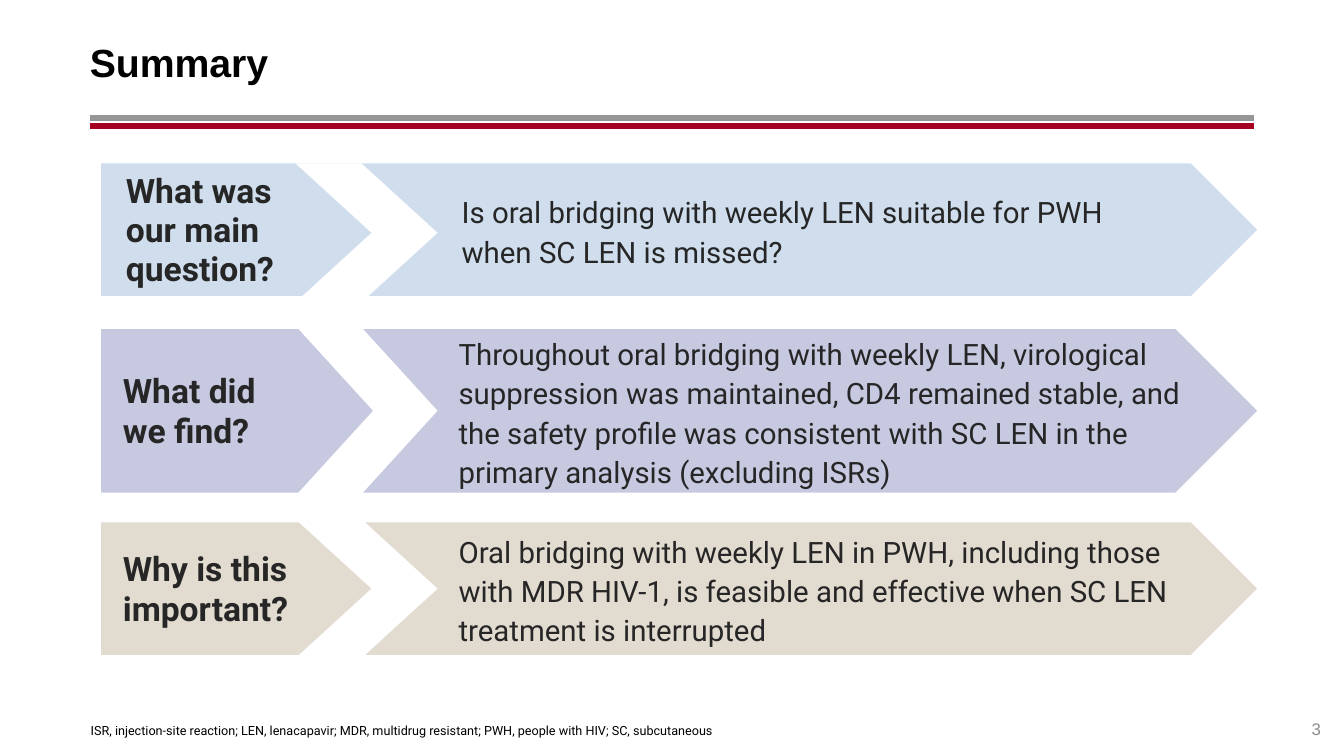
from dataclasses import dataclass

from lxml import etree
from pptx import Presentation
from pptx import util as u
from pptx.dml.color import RGBColor
from pptx.enum import shapes, text
from pptx.oxml import ns


@dataclass(frozen=True)
class Theme:
    ink: str = "262626"
    black: str = "000000"
    white: str = "FFFFFF"
    muted: str = "8C8C8C"
    rules: tuple = ("969696", "A50021")
    bands: tuple = ("CFDDED", "C7C9E1", "E2DBD0")
    head_font: str = "Arial"
    body_font: str = "Roboto"
    title_size: float = 28
    question_size: float = 24
    answer_size: float = 21
    number_size: float = 12
    note_size: float = 9
    leading: float = 28
    rule_width: float = 4.25
    outline: float = 6


THEME = Theme()
TOP, MIDDLE, BOTTOM = (text.MSO_ANCHOR.TOP, text.MSO_ANCHOR.MIDDLE,
                       text.MSO_ANCHOR.BOTTOM)

# question, answer, lines of each, band top, band height, nudge of first row's parts
ROWS = [
    ("What was our main question?", 2.04, 3,
     "Is oral bridging with weekly LEN suitable for PWH when SC LEN is missed?",
     7.19, 2, 1.58, 1.4, 0.03),
    ("What did we find?", 1.92, 2,
     "Throughout oral bridging with weekly LEN, virological suppression was "
     "maintained, CD4 remained stable, and the safety profile was consistent "
     "with SC LEN in the primary analysis (excluding ISRs)",
     7.54, 4, 3.22, 1.71, 0),
    ("Why is this important?", 2.55, 2,
     "Oral bridging with weekly LEN in PWH, including those with MDR HIV-1, is "
     "feasible and effective when SC LEN treatment is interrupted",
     7.14, 3, 5.14, 1.4, 0),
]


def inches(box):
    return [u.Inches(length) for length in box]


def apply(target, values):
    for name, value in values.items():
        setattr(target, name, value)


def add_text(slide, box, wording, size, font, color, bold=False, anchor=TOP,
             align=text.PP_ALIGN.LEFT, insets=(0, 0, 0, 0), leading=None):
    """Insets run left, top, right, bottom."""
    frame = slide.shapes.add_textbox(*inches(box)).text_frame
    sides = ("margin_left", "margin_top", "margin_right", "margin_bottom")
    apply(frame, dict(zip(sides, inches(insets)), word_wrap=True,
                      vertical_anchor=anchor))
    paragraph = frame.paragraphs[0]
    paragraph.alignment = align
    if leading:
        paragraph.line_spacing = u.Pt(leading)
    run = paragraph.add_run()
    run.text = wording
    apply(run.font, {"size": u.Pt(size), "name": font, "bold": bold})
    run.font.color.rgb = RGBColor.from_string(color)


def add_arrow(slide, preset, box, fill):
    arrow = slide.shapes.add_shape(preset, *inches(box))
    arrow.shadow.inherit = False
    arrow.fill.solid()
    arrow.fill.fore_color.rgb = RGBColor.from_string(fill)
    arrow.line.fill.background()
    return arrow


def add_header(slide, left, top, width):
    add_text(slide, (left, top, width, 0.86), "Summary", THEME.title_size,
             THEME.head_font, THEME.black, bold=True, anchor=MIDDLE,
             insets=(0, 0.05, 0.1, 0.05))
    for index, color in enumerate(THEME.rules):
        y = top + 0.99 + 0.08 * index
        rule = slide.shapes.add_connector(
            shapes.MSO_CONNECTOR.STRAIGHT, *inches((left, y, left + width, y)))
        rule.line.width = u.Pt(THEME.rule_width)
        rule.line.color.rgb = RGBColor.from_string(color)
        etree.SubElement(rule.element.spPr, ns.qn("a:effectLst"))


def add_band(slide, box, color, nudge, question, answer):
    """Question and answer are (wording, width, lines), centred on the band."""
    left, top, width, height = box
    band = add_arrow(slide, shapes.MSO_SHAPE.PENTAGON, box, color)
    band.line.width = u.Pt(THEME.outline)
    band.line.color.rgb = RGBColor.from_string(THEME.white)
    gap = add_arrow(slide, shapes.MSO_SHAPE.CHEVRON,
                    (left + 1.97, top + 0.01 + nudge, 1.41, height - 0.02),
                    THEME.white)
    gap.adjustments[0] = 0.547
    for part, offset, size, bold in (
            (question, 0.16, THEME.question_size, True),
            (answer, 3.49, THEME.answer_size, False)):
        wording, text_width, lines = part
        text_height = 0.1 + lines * THEME.leading / 72
        add_text(slide, (left + offset + nudge, top + (height - text_height) / 2,
                         text_width, text_height),
                 wording, size, THEME.body_font, THEME.ink, bold=bold,
                 insets=(0.1, 0.05, 0, 0.05), leading=THEME.leading)


def add_footer(slide, left, top, width):
    add_text(slide, (left, top, width, 0.5),
             "ISR, injection-site reaction; LEN, lenacapavir; MDR, multidrug "
             "resistant; PWH, people with HIV; SC, subcutaneous",
             THEME.note_size, THEME.body_font, THEME.black, anchor=BOTTOM)
    add_text(slide, (left + width, top + 0.11, 0.65, 0.4), "3",
             THEME.number_size, THEME.head_font, THEME.muted, anchor=BOTTOM,
             align=text.PP_ALIGN.RIGHT)


def main():
    deck = Presentation()
    apply(deck, {"slide_width": u.Inches(13.33), "slide_height": u.Inches(7.5)})
    slide = deck.slides.add_slide(deck.slide_layouts[6])
    add_header(slide, 0.89, 0.18, 11.55)
    for row, color in zip(ROWS, THEME.bands):
        top, height, nudge = row[6:]
        add_band(slide, (0.96, top, 11.57, height), color, nudge,
                 question=row[:3], answer=row[3:6])
    add_footer(slide, 0.9, 6.82, 11.55)
    deck.save("out.pptx")


if __name__ == "__main__":
    main()
